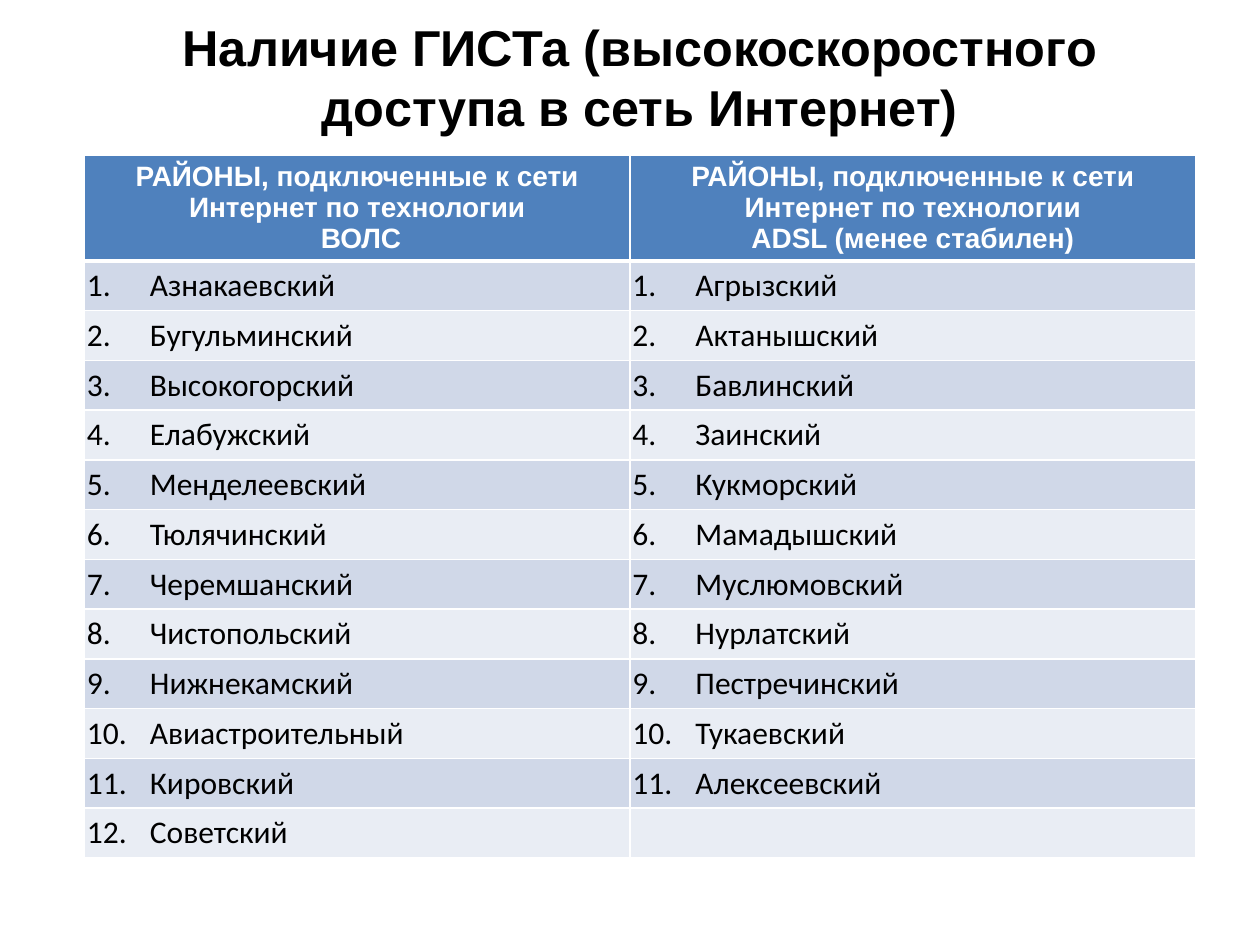
from lxml.etree import SubElement
from pptx import Presentation
from pptx.dml.color import RGBColor
from pptx.enum.text import MSO_ANCHOR, PP_ALIGN
from pptx.oxml.ns import qn
from pptx.util import Inches, Pt

TITLE = "Наличие ГИСТа (высокоскоростного доступа в сеть Интернет)"
HEAD = "РАЙОНЫ, подключенные к сети Интернет по технологии"
LISTS = [
    (" ВОЛС", ["Азнакаевский", "Бугульминский", "Высокогорский",
               "Елабужский", "Менделеевский", "Тюлячинский",
               "Черемшанский", "Чистопольский", "Нижнекамский",
               "Авиастроительный", "Кировский", "Советский"]),
    ("ADSL (менее стабилен)", ["Агрызский", "Актанышский", "Бавлинский",
                               "Заинский", "Кукморский", "Мамадышский",
                               "Муслюмовский", "Нурлатский", "Пестречинский",
                               "Тукаевский", "Алексеевский"]),
]
BLUE, BANDS = "4F81BD", ("D0D8E8", "E9EDF4")
WHITE, BLACK = "FFFFFF", "000000"
FONT = {"name": "Arial", "bold": True}
PAD = {"margin_left": Inches(0.02), "margin_right": 0,
       "margin_top": 0, "margin_bottom": 0,
       "vertical_anchor": MSO_ANCHOR.MIDDLE}
WIDE = (4.33, 4.49)
TOP, BODY = 0.83, 4.74
ROWS = max(len(names) for _, names in LISTS)


def color(code):
    return RGBColor.from_string(code)


def assign(item, values):
    for key, value in values.items():
        setattr(item, key, value)


def style(para, size, code, align):
    para.alignment = align
    assign(para.font, {**FONT, "size": Pt(size)})
    for run in para.runs:
        assign(run.font, {**FONT, "size": Pt(size)})
        run.font.color.rgb = color(code)


def border(cell, low):
    props = cell._tc.get_or_add_tcPr()
    for spot, side in enumerate(("lnL", "lnR", "lnT", "lnB")):
        width = low if side == "lnB" else 1
        line = SubElement(props, qn(f"a:{side}"), w=str(Pt(width)))
        fill = SubElement(line, qn("a:solidFill"))
        SubElement(fill, qn("a:srgbClr"), val=WHITE)
        props.insert(spot, line)


def paint(cell, code, low=1):
    cell.fill.solid()
    cell.fill.fore_color.rgb = color(code)
    border(cell, low)


def stop(para, place):
    tabs = SubElement(para._p.get_or_add_pPr(), qn("a:tabLst"))
    SubElement(tabs, qn("a:tab"), pos=str(Inches(place)), algn="l")


def add_title(slide):
    title = slide.shapes.title
    assign(title, {"left": Inches(0.83), "top": Inches(0.21),
                   "width": Inches(8.5), "height": Inches(0.79)})
    frame = title.text_frame
    assign(frame, {"text": TITLE, "word_wrap": True,
                   "vertical_anchor": MSO_ANCHOR.MIDDLE})
    style(frame.paragraphs[0], 28.8, BLACK, PP_ALIGN.CENTER)


def add_lists(slide):
    table = slide.shapes.add_table(
        ROWS + 1, len(LISTS), Inches(0.67), Inches(1.23),
        Inches(sum(WIDE)), Inches(TOP + BODY)).table
    for row in table.rows:
        row.height = Inches(BODY / ROWS)
    table.rows[0].height = Inches(TOP)
    for col, (kind, names) in enumerate(LISTS):
        table.columns[col].width = Inches(WIDE[col])
        head = table.cell(0, col)
        head.text = f"{HEAD}\n{kind}"
        paint(head, BLUE, 3)
        for para in head.text_frame.paragraphs:
            style(para, 16, WHITE, PP_ALIGN.CENTER)
        for num in range(1, ROWS + 1):
            cell = table.cell(num, col)
            assign(cell, PAD)
            paint(cell, BANDS[(num - 1) % 2])
            para = cell.text_frame.paragraphs[0]
            if num <= len(names):
                cell.text = f"{num}.\t{names[num - 1]}"
                stop(para, 0.31 if num < 10 else 0.43)
            style(para, 16, BLACK, PP_ALIGN.LEFT)


def main():
    """Build the slide listing districts by connection type."""
    deck = Presentation()
    assign(deck, {"slide_width": Inches(10), "slide_height": Inches(7.5)})
    slide = deck.slides.add_slide(deck.slide_layouts[5])
    add_title(slide)
    add_lists(slide)
    deck.save("out.pptx")


if __name__ == "__main__":
    main()
